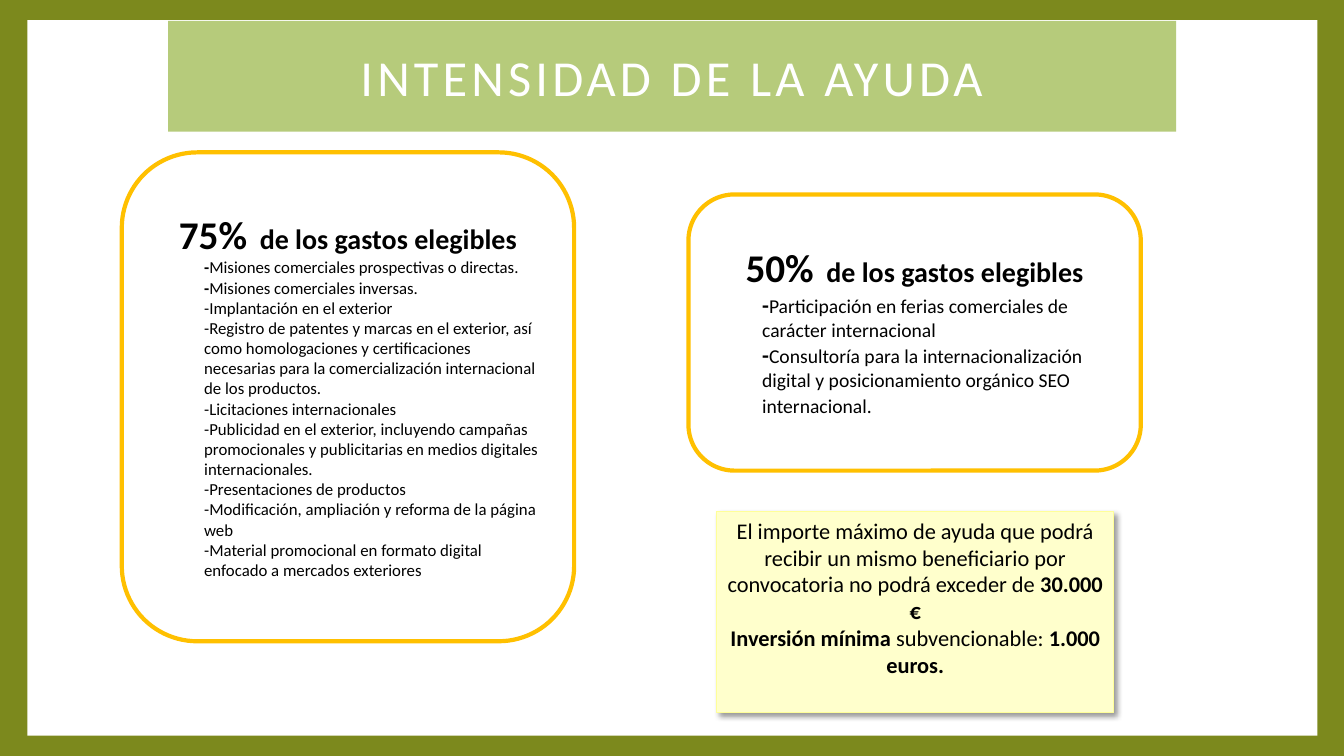
import pptx
import pptx.util
import pptx.dml.color
import pptx.enum.shapes
import pptx.enum.text
from lxml import etree

Cm, Pt = pptx.util.Cm, pptx.util.Pt
RGB = pptx.dml.color.RGBColor
KIND = pptx.enum.shapes.MSO_SHAPE
ALIGN = pptx.enum.text.PP_ALIGN
ANCHOR = pptx.enum.text.MSO_ANCHOR

OLIVE = RGB(0x7C, 0x89, 0x1D)
GREEN = RGB(0xB6, 0xCB, 0x7B)
GOLD = RGB(0xFF, 0xC0, 0x00)
CREAM = RGB(0xFF, 0xFF, 0xCC)
LEMON = RGB(0xFF, 0xFF, 0x99)
WHITE = RGB(0xFF, 0xFF, 0xFF)
BLACK = RGB(0x00, 0x00, 0x00)

# Runs are (text, size, bold)
TITLE = "INTENSIDAD DE LA AYUDA"
BASIS = "de los gastos elegibles"
MISSIONS = [
    [("-", 12, True), ("Misiones comerciales prospectivas o directas.", 12, False)],
    [("-", 12, True), ("Misiones comerciales inversas.", 12, False)],
] + [[("-" + text, 12, False)] for text in (
    "Implantación en el exterior",
    "Registro de patentes y marcas en el exterior, así como homologaciones y "
    "certificaciones necesarias para la comercialización internacional de los productos.",
    "Licitaciones internacionales",
    "Publicidad en el exterior, incluyendo campañas promocionales y publicitarias "
    "en medios digitales internacionales.",
    "Presentaciones de productos",
    "Modificación, ampliación y reforma de la página web",
    "Material promocional en formato digital enfocado a mercados exteriores",
)]
FAIRS = [
    [("-", 16, True),
     ("Participación en ferias comerciales de carácter internacional", 14, False)],
    [("-", 16, True),
     ("Consultoría para la internacionalización digital y posicionamiento "
      "orgánico SEO internacional.", 14, False), (" ", 16, True)],
]
LIMITS = [
    [("El importe máximo de ayuda que podrá recibir un mismo beneficiario por "
      "convocatoria no podrá exceder de ", 16, False), ("30.000 €", 16, True)],
    [("Inversión mínima", 16, True), (" subvencionable: ", 16, False),
     ("1.000 euros.", 16, True)],
]

# Left, top, width, height in cm
PANEL = (0.69, 0.51, 32.51, 18.03)
BANNER = (4.24, 0.53, 25.4, 2.79)
GRANTS = [
    ("75%", MISSIONS, (3.07, 3.84, 11.4, 12.32)),
    ("50%", FAIRS, (17.35, 4.9, 11.4, 6.96)),
]
NOTE = (18.06, 12.9, 10.01, 5.05)
INDENT = Cm(1.27)
HEAD = Cm(0.9)

deck = pptx.Presentation()
deck.slide_width, deck.slide_height = Cm(33.87), Cm(19.05)
slide = deck.slides.add_slide(deck.slide_layouts[6])
slide.background.fill.solid()
slide.background.fill.fore_color.rgb = OLIVE


def add_box(kind, place, fill=None, line=None, width=0):
    box = slide.shapes.add_shape(kind, *map(Cm, place))
    box.shadow.inherit = False
    if fill is None:
        box.fill.background()
    else:
        box.fill.solid()
        box.fill.fore_color.rgb = fill
    if line is None:
        box.line.fill.background()
    else:
        box.line.color.rgb = line
        box.line.width = Pt(width)
    frame = box.text_frame
    form = {"word_wrap": True, "vertical_anchor": ANCHOR.TOP}
    for key, value in form.items():
        setattr(frame, key, value)
    return box


def add_run(para, text, size, bold, color=BLACK, gap=0):
    """Add a run; gap is the extra letter spacing in points."""
    run = para.add_run()
    run.text = text
    form = {"name": "Calibri", "size": Pt(size), "bold": bold}
    for key, value in form.items():
        setattr(run.font, key, value)
    run.font.color.rgb = color
    if gap:
        run.font._element.set("spc", str(round(gap * 100)))


def add_para(frame, runs, align):
    """Fill the first paragraph if it is empty, else add one."""
    para = frame.paragraphs[0]
    if para.runs:
        para = frame.add_paragraph()
    para.alignment = align
    for run in runs:
        add_run(para, *run)
    return para


def cast_shadow(box):
    space = "{http://schemas.openxmlformats.org/drawingml/2006/main}"
    effects = box._element.spPr.find(space + "effectLst")
    outer = etree.SubElement(effects, space + "outerShdw", {
        "blurRad": str(Pt(4)), "dist": str(Pt(3)), "dir": str(45 * 60000),
        "algn": "tl", "rotWithShape": "0"})
    tint = etree.SubElement(outer, space + "srgbClr", val=str(BLACK))
    etree.SubElement(tint, space + "alpha", val="40000")


add_box(KIND.RECTANGLE, PANEL, WHITE)

banner = add_box(KIND.RECTANGLE, BANNER, GREEN).text_frame
banner.vertical_anchor = ANCHOR.MIDDLE
add_para(banner, [(TITLE, 36, False, WHITE, 3)], ALIGN.CENTER)

for rate, items, place in GRANTS:
    frame = add_box(KIND.ROUNDED_RECTANGLE, place, None, GOLD, 3).text_frame
    frame.margin_top = HEAD
    title = [(rate, 28, True), (" ", 28, False, BLACK, 2.7), (BASIS, 20, True)]
    add_para(frame, title, ALIGN.CENTER)
    for item in items:
        para = add_para(frame, item, ALIGN.LEFT)
        para.level = 1
        props = para._p.get_or_add_pPr()
        for key, value in {"marL": INDENT, "indent": 0}.items():
            props.set(key, str(int(value)))

note = add_box(KIND.RECTANGLE, NOTE, CREAM, LEMON, 0.75)
cast_shadow(note)
for limit in LIMITS:
    add_para(note.text_frame, limit, ALIGN.CENTER)

deck.save("out.pptx")
